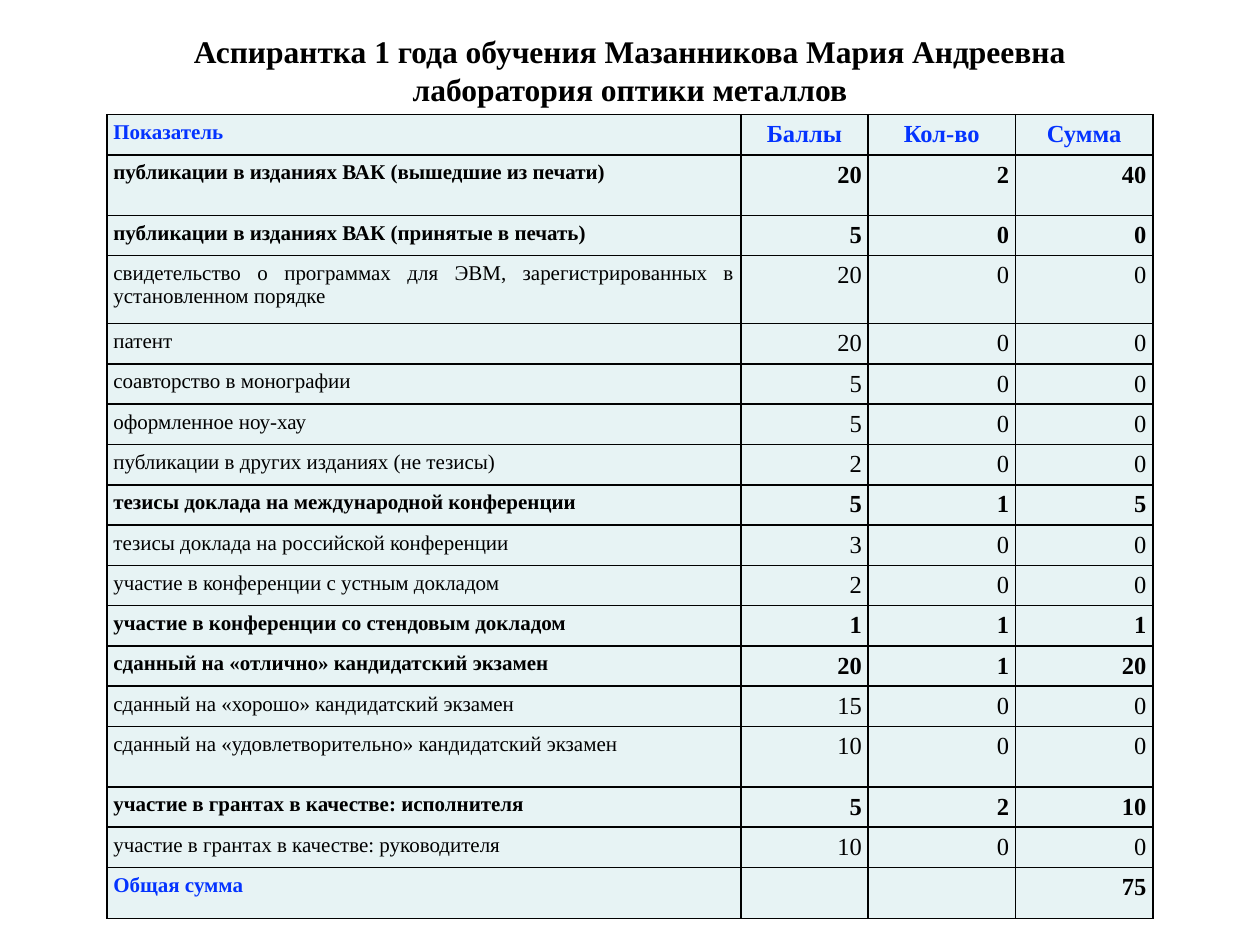
"""Builds a slide with a postgraduate's score table."""
from lxml import etree
from pptx import Presentation
from pptx.dml.color import RGBColor
from pptx.enum.text import MSO_ANCHOR, PP_ALIGN
from pptx.oxml.ns import qn
from pptx.util import Inches, Pt

LEFT, CENTER, RIGHT = PP_ALIGN.JUSTIFY, PP_ALIGN.CENTER, PP_ALIGN.RIGHT
MIDDLE = MSO_ANCHOR.MIDDLE
FONT, BLACK, BLUE, PALE = "Times New Roman", "000000", "0433FF", "E7F3F4"
BORDER = Pt(0.96)
SIDES = ("left", "right", "top", "bottom")

TITLE = "Аспирантка 1 года обучения Мазанникова Мария Андреевна\vлаборатория оптики металлов"
HEADER = ("Показатель", "Баллы", "Кол-во", "Сумма")
SCORES = [
    ("публикации в изданиях ВАК (вышедшие из печати)", 20, 2),
    ("публикации в изданиях ВАК (принятые в печать)", 5, 0),
    ("свидетельство о программах для ЭВМ, зарегистрированных в установленном порядке", 20, 0),
    ("патент", 20, 0),
    ("соавторство в монографии", 5, 0),
    ("оформленное ноу-хау", 5, 0),
    ("публикации в других изданиях (не тезисы)", 2, 0),
    ("тезисы доклада на международной конференции", 5, 1),
    ("тезисы доклада на российской конференции", 3, 0),
    ("участие в конференции с устным докладом", 2, 0),
    ("участие в конференции со стендовым докладом", 1, 1),
    ("сданный на «отлично» кандидатский экзамен", 20, 1),
    ("сданный на «хорошо» кандидатский экзамен", 15, 0),
    ("сданный на «удовлетворительно» кандидатский экзамен", 10, 0),
    ("участие в грантах в качестве: исполнителя", 5, 2),
    ("участие в грантах в качестве: руководителя", 10, 0),
]
TOTAL = ("Общая сумма", "", "", 75)
BOLD_ROWS = {0, 1, 2, 8, 11, 12, 15, 17}
COL_WIDTHS = (5.03, 1.01, 1.17, 1.09)
ROW_HEIGHT = 0.32
TALL_ROWS = {1: 0.48, 3: 0.54, 14: 0.48, 17: 0.35}


def rgb(value):
    return RGBColor.from_string(value)


def set_margins(target):
    for side in SIDES:
        setattr(target, f"margin_{side}", Inches(0.05))


def write(tf, text, align, size, color, bold):
    p = tf.paragraphs[0]
    p.text, p.alignment = text, align
    for r in p.runs:
        for name, value in {"name": FONT, "size": Pt(size), "bold": bold}.items():
            setattr(r.font, name, value)
        r.font.color.rgb = rgb(color)


def style_cell(cell):
    set_margins(cell)
    tc_pr = cell._tc.get_or_add_tcPr()
    for tag in ("a:lnL", "a:lnR", "a:lnT", "a:lnB"):
        ln = etree.SubElement(tc_pr, qn(tag), w=str(int(BORDER)))
        fill = etree.SubElement(ln, qn("a:solidFill"))
        etree.SubElement(fill, qn("a:srgbClr"), val=BLACK)
    cell.fill.solid()
    cell.fill.fore_color.rgb = rgb(PALE)


def add_scores(s):
    rows = [HEADER, *((name, pts, n, pts * n) for name, pts, n in SCORES), TOTAL]
    heights = [TALL_ROWS.get(i, ROW_HEIGHT) for i in range(len(rows))]
    table = s.shapes.add_table(len(rows), len(HEADER), Inches(0.85), Inches(0.91),
                               Inches(sum(COL_WIDTHS)), Inches(sum(heights))).table
    table.first_row = table.horz_banding = False
    for col, width in zip(table.columns, COL_WIDTHS):
        col.width = Inches(width)
    for i, (values, height) in enumerate(zip(rows, heights)):
        table.rows[i].height = Inches(height)
        for j, value in enumerate(values):
            cell = table.cell(i, j)
            style_cell(cell)
            if value == "":
                continue
            align = LEFT if j == 0 else CENTER if i == 0 else RIGHT
            blue = i == 0 or (values is TOTAL and j == 0)
            write(cell.text_frame, str(value), align, 14 if j else 12,
                  BLUE if blue else BLACK, i in BOLD_ROWS)


def add_title(s):
    tf = s.shapes.add_textbox(Inches(0.75), Inches(0.2), Inches(8.5), Inches(0.71)).text_frame
    tf.word_wrap, tf.vertical_anchor = True, MIDDLE
    set_margins(tf)
    write(tf, TITLE, CENTER, 18, BLACK, True)


def main():
    prs = Presentation()
    prs.slide_width, prs.slide_height = Inches(10), Inches(7.5)
    s = prs.slides.add_slide(prs.slide_layouts[6])
    add_scores(s)
    add_title(s)
    prs.save("out.pptx")


if __name__ == "__main__":
    main()
